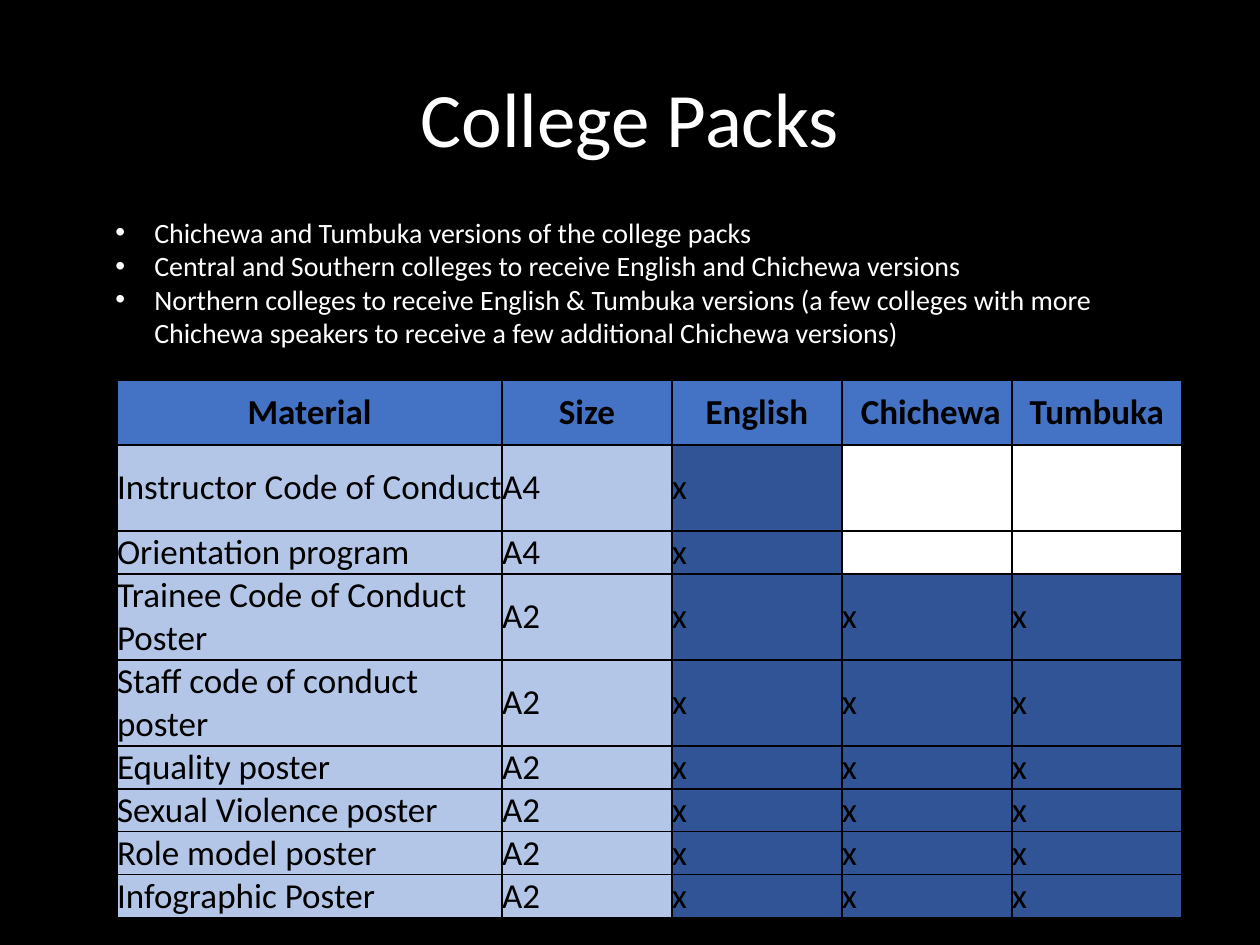
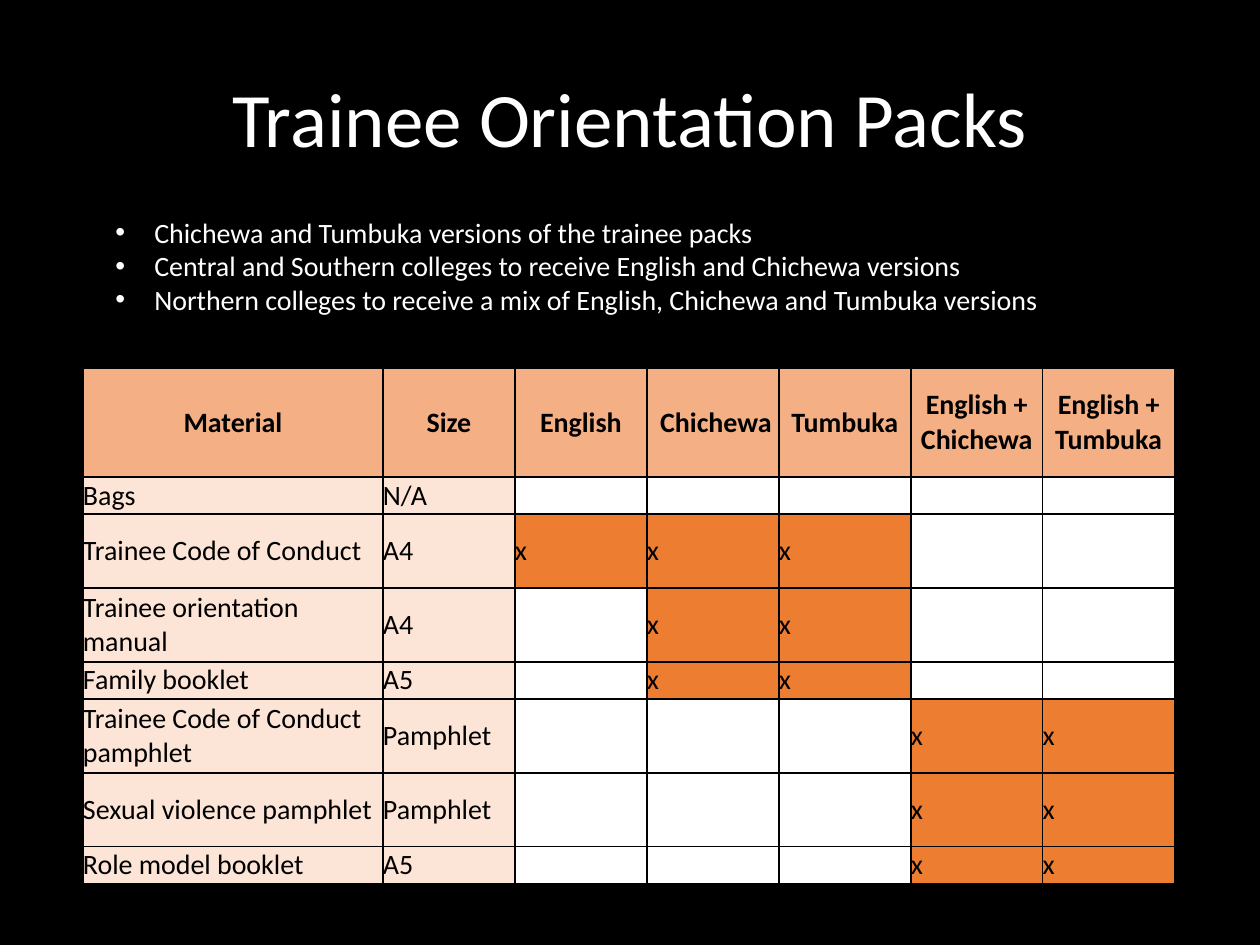
from lxml import etree
from pptx import Presentation
from pptx import util as u
from pptx.dml.color import RGBColor
from pptx.enum import text
from pptx.oxml import ns

PX = u.Inches(10) / 1260
FONT = "Calibri"
BLACK = RGBColor(0x00, 0x00, 0x00)
WHITE = RGBColor(0xFF, 0xFF, 0xFF)
BLUES = {"head": RGBColor(0x44, 0x72, 0xC4), "label": RGBColor(0xB4, 0xC6, 0xE7),
         "mark": RGBColor(0x30, 0x54, 0x96)}
ORANGES = {"head": RGBColor(0xF4, 0xB0, 0x84), "label": RGBColor(0xFC, 0xE4, 0xD6),
           "mark": RGBColor(0xED, 0x7D, 0x31)}
TITLE_BOX = (63, 38, 1134, 157)
LANGUAGES = ["English", " Chichewa", "Tumbuka"]

# Each row: material, size, marks by language ("-" is not printed), lines of height
COLLEGE_ROWS = [
    ("Instructor Code of Conduct", "A4", "x--", 2),
    ("Orientation program", "A4", "x--", 1),
    ("Trainee Code of Conduct Poster", "A2", "xxx", 2),
    ("Staff code of conduct poster", "A2", "xxx", 2),
    ("Equality poster", "A2", "xxx", 1),
    ("Sexual Violence poster", "A2", "xxx", 1),
    ("Role model poster", "A2", "xxx", 1),
    ("Infographic Poster", "A2", "xxx", 1),
]
TRAINEE_ROWS = [
    ("Bags", "N/A", "-----", 1),
    ("Trainee Code of Conduct", "A4", "xxx--", 2),
    ("Trainee orientation manual", "A4", "-xx--", 2),
    ("Family booklet", "A5", "-xx--", 1),
    ("Trainee Code of Conduct pamphlet", "Pamphlet", "---xx", 2),
    ("Sexual violence pamphlet", "Pamphlet", "---xx", 2),
    ("Role model booklet", "A5", "---xx", 1),
]


def px(length):
    return u.Emu(round(length * PX))


def style(para, size, colour, bold=False):
    para.font.name = FONT
    para.font.size = u.Pt(size)
    para.font.color.rgb = colour
    para.font.bold = bold


def add_text_frame(page, box):
    frame = page.shapes.add_textbox(*map(px, box)).text_frame
    frame.word_wrap = True
    return frame


def add_title(page, box, title):
    frame = add_text_frame(page, box)
    frame.vertical_anchor = text.MSO_ANCHOR.MIDDLE
    para = frame.paragraphs[0]
    para.text = title
    para.alignment = text.PP_ALIGN.CENTER
    style(para, 44, WHITE)


def add_bullets(page, box, lines):
    frame = add_text_frame(page, box)
    for index, line in enumerate(lines):
        para = frame.add_paragraph() if index else frame.paragraphs[0]
        para.text = line
        props = para._p.get_or_add_pPr()
        props.set("marL", str(px(39)))
        props.set("indent", str(-px(39)))
        etree.SubElement(props, ns.qn("a:buFont"), typeface="Arial")
        etree.SubElement(props, ns.qn("a:buChar"), char="•")
        style(para, 16, WHITE)


def add_borders(cell):
    """Rule all four sides in black; call before filling the cell."""
    props = cell._tc.get_or_add_tcPr()
    for side in ("lnL", "lnR", "lnT", "lnB"):
        line = etree.SubElement(props, ns.qn(f"a:{side}"), w=str(u.Pt(1)))
        fill = etree.SubElement(line, ns.qn("a:solidFill"))
        etree.SubElement(fill, ns.qn("a:srgbClr"), val=str(BLACK))


def fill_cell(cell, words, colour, size, heading=False):
    cell.margin_left = cell.margin_right = cell.margin_top = cell.margin_bottom = 0
    cell.vertical_anchor = text.MSO_ANCHOR.MIDDLE
    add_borders(cell)
    cell.fill.solid()
    cell.fill.fore_color.rgb = colour
    para = cell.text_frame.paragraphs[0]
    if words:
        para.text = words
    if heading:
        para.alignment = text.PP_ALIGN.CENTER
    style(para, size, BLACK, heading)


def add_pack_table(page, corner, widths, head_height, line_height,
                   languages, rows, colours, size):
    """widths holds the material column and the width shared by all others."""
    heads = ["Material", "Size", *languages]
    columns = [widths[0]] + [widths[1]] * (len(heads) - 1)
    heights = [head_height] + [row[-1] * line_height for row in rows]
    table = page.shapes.add_table(len(heights), len(columns), *map(
        px, (*corner, sum(columns), sum(heights)))).table
    table.first_row = table.horz_banding = False
    for column, width in zip(table.columns, columns):
        column.width = px(width)
    for row, height in zip(table.rows, heights):
        row.height = px(height)

    for column, head in enumerate(heads):
        fill_cell(table.cell(0, column), head, colours["head"], size, heading=True)
    for index, (material, paper, marks, _) in enumerate(rows, 1):
        for column, label in enumerate((material, paper)):
            fill_cell(table.cell(index, column), label, colours["label"], size)
        for column, mark in enumerate(marks, 2):
            printed = mark == "x"
            fill_cell(table.cell(index, column), mark if printed else "",
                      colours["mark"] if printed else WHITE, size)


def add_pack_page(deck, title, bullets, bullets_height, **table):
    page = deck.slides.add_slide(deck.slide_layouts[6])
    page.background.fill.solid()
    page.background.fill.fore_color.rgb = BLACK
    add_title(page, TITLE_BOX, title)
    add_pack_table(page, **table)
    add_bullets(page, (103, 209, 1045, bullets_height), bullets)


def main():
    deck = Presentation()
    deck.slide_width, deck.slide_height = px(1260), px(945)
    central = "Central and Southern colleges to receive English and Chichewa versions"
    add_pack_page(
        deck, "College Packs",
        ["Chichewa and Tumbuka versions of the college packs", central,
         "Northern colleges to receive English & Tumbuka versions (a few colleges "
         "with more Chichewa speakers to receive a few additional Chichewa versions)"],
        149, corner=(117, 380), widths=(385, 170), head_height=65, line_height=43,
        languages=LANGUAGES, rows=COLLEGE_ROWS, colours=BLUES, size=20)
    add_pack_page(
        deck, "Trainee Orientation Packs",
        ["Chichewa and Tumbuka versions of the trainee packs", central,
         "Northern colleges to receive a mix of English, Chichewa and Tumbuka versions"],
        115, corner=(83, 368), widths=(300, 132), head_height=109, line_height=37,
        languages=LANGUAGES + ["English + Chichewa", "English + Tumbuka"],
        rows=TRAINEE_ROWS, colours=ORANGES, size=16)
    deck.save("out.pptx")


if __name__ == "__main__":
    main()
